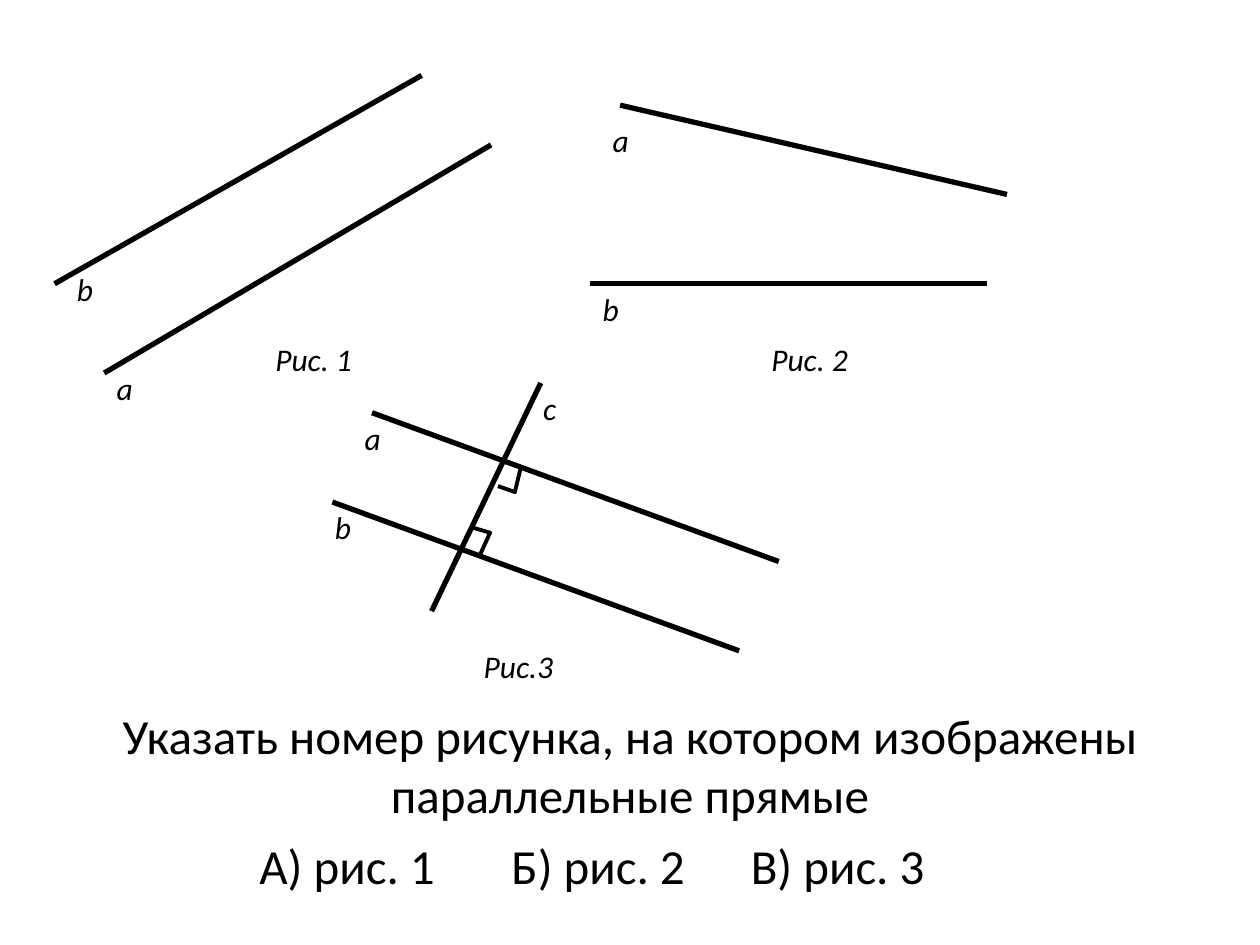
from lxml import etree
from pptx import Presentation
from pptx.dml.color import RGBColor
from pptx.enum.shapes import MSO_CONNECTOR
from pptx.enum.text import MSO_ANCHOR, MSO_AUTO_SIZE, PP_ALIGN
from pptx.oxml.ns import qn
from pptx.util import Inches, Pt

STRAIGHT = MSO_CONNECTOR.STRAIGHT
TOP, BOTTOM = MSO_ANCHOR.TOP, MSO_ANCHOR.BOTTOM
LEFT, CENTER = PP_ALIGN.LEFT, PP_ALIGN.CENTER
FIT, FIXED = MSO_AUTO_SIZE.SHAPE_TO_FIT_TEXT, MSO_AUTO_SIZE.NONE
COLORS = {"ink": "000000"}
WIDTH, HEIGHT = Inches(10), Inches(7.5)
CELL = WIDTH / 127
LABEL_FONT = {"name": "Calibri", "size": Pt(18), "italic": True}
TASK_FONT = {"name": "Calibri", "size": Pt(28)}
LABEL_FRAME = {"word_wrap": False, "auto_size": FIT}
TITLE_FRAME = {"word_wrap": True, "auto_size": FIXED, "vertical_anchor": BOTTOM}
ANSWER_FRAME = {"word_wrap": True, "auto_size": FIXED, "vertical_anchor": TOP,
                "margin_left": Inches(0.37)}

FIGURES = [
    {"origin": (5.5, 7.6),
     "lines": [(5, 30, 44, 7), (0, 21, 37, 0)],
     "labels": [("а", 5, 29, 4.2), ("b", 1, 19, 4.2), ("Рис. 1", 21, 26, 10.4)],
     "angles": []},
    {"origin": (59.5, 10.6),
     "lines": [(3, 0, 42, 9), (0, 18, 40, 18)],
     "labels": [("а", 1, 1, 4.2), ("b", 0, 18, 4.2), ("Рис. 2", 17, 23, 10.4)],
     "angles": []},
    {"origin": (32.5, 38.6),
     "lines": [(5, 3, 46, 18), (1, 12, 42, 27), (11, 23, 22, 0)],
     "labels": [("а", 3, 3, 4.2), ("b", 0, 12, 4.2), ("с", 21, 0, 4),
                ("Рис.3", 15, 26, 9.7)],
     "angles": [[(17.7, 10.4), (19.4, 11), (20, 8.5)],
                [(15.2, 14.6), (16.9, 15.1), (15.9, 17.3)]]},
]


def apply(target, values):
    """Set each named value on the target."""
    for name, value in values.items():
        setattr(target, name, value)


def add_text(page, box, text, font, frame_format, align=LEFT):
    """Place one paragraph of text in the box."""
    shape = page.shapes.add_textbox(*map(round, box))
    apply(shape.text_frame, frame_format)
    para = shape.text_frame.paragraphs[0]
    para.alignment = align
    span = para.add_run()
    span.text = text
    apply(span.font, font)
    span.font.color.rgb = RGBColor.from_string(COLORS["ink"])
    return para


def ink_line(shape, width):
    """Give a shape a plain ink line of the given width."""
    shape.line.color.rgb = RGBColor.from_string(COLORS["ink"])
    shape.line.width = Pt(width)


def draw_figure(page, origin, lines, labels, angles):
    """Draw one numbered figure in grid cells counted from its origin."""
    def place(column, row):
        """Turn a grid point of the figure into slide lengths."""
        return round((origin[0] + column) * CELL), round((origin[1] + row) * CELL)

    for x1, y1, x2, y2 in lines:
        line = page.shapes.add_connector(STRAIGHT, *place(x1, y1), *place(x2, y2))
        ink_line(line, 3)
        etree.SubElement(line._element.spPr, qn("a:effectLst"))
    for points in angles:
        start, *rest = [place(*point) for point in points]
        builder = page.shapes.build_freeform(*start)
        builder.add_line_segments(rest, close=False)
        angle = builder.convert_to_shape()
        angle.shadow.inherit = False
        angle.fill.background()
        ink_line(angle, 2.25)
    for text, column, row, columns in labels:
        box = (*place(column, row), columns * CELL, 5.1 * CELL)
        add_text(page, box, text, LABEL_FONT, LABEL_FRAME)


def write_task(page, left, top, width, height):
    """Write the question and, on the row below it, the answers at tab stops."""
    add_text(page, (left, top, width, height),
             "Указать номер рисунка, на котором изображены параллельные прямые",
             TASK_FONT, TITLE_FRAME, CENTER)
    answers = "\t".join(["А) рис. 1", "Б) рис. 2", "В) рис. 3"])
    box = (left + 0.144 * width, top + height, 0.646 * width, height)
    para = add_text(page, box, answers, TASK_FONT, ANSWER_FRAME)
    stops = etree.SubElement(para._p.get_or_add_pPr(), qn("a:tabLst"))
    for stop in (2, 3.9):
        etree.SubElement(stops, qn("a:tab"), pos=str(Inches(stop)), algn="l")


def main():
    """Build the slide and save the deck."""
    deck = Presentation()
    deck.slide_width, deck.slide_height = WIDTH, HEIGHT
    page = deck.slides.add_slide(deck.slide_layouts[6])
    for figure in FIGURES:
        draw_figure(page, **figure)
    write_task(page, 0.035 * WIDTH, 0.815 * HEIGHT, 0.93 * WIDTH, 0.063 * HEIGHT)
    deck.save("out.pptx")


if __name__ == "__main__":
    main()
